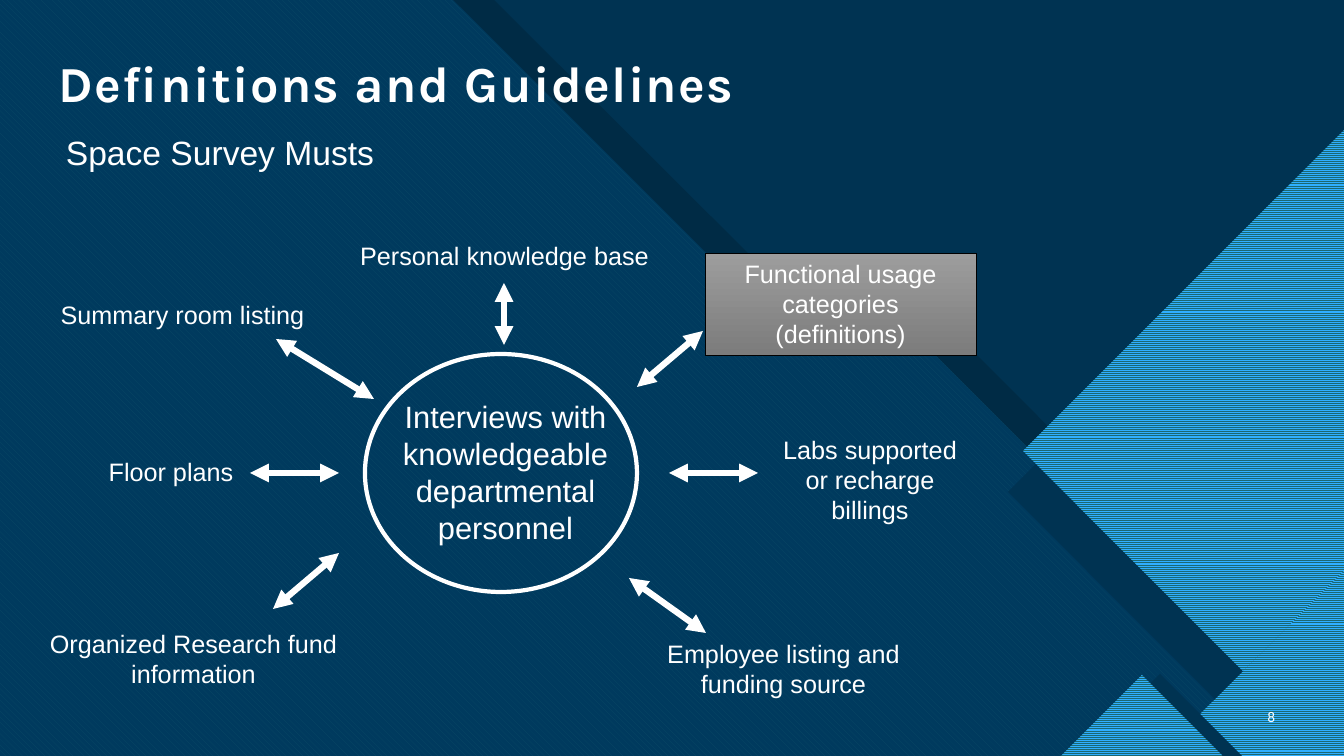
from lxml import etree
from pptx import Presentation
from pptx.dml.color import RGBColor
from pptx.enum.dml import MSO_PATTERN
from pptx.enum.shapes import MSO_CONNECTOR, MSO_SHAPE
from pptx.enum.text import MSO_ANCHOR, PP_ALIGN
from pptx.oxml.ns import qn
from pptx.util import Pt

PX = 12192000 / 1344  # EMU in one px
W, H = 1344, 756

WHITE = RGBColor(0xFF, 0xFF, 0xFF)
BLACK = RGBColor(0, 0, 0)
NAVY = RGBColor(0x00, 0x33, 0x52)
BLUE = RGBColor(0x00, 0x65, 0xA4)
CYAN = RGBColor(0x47, 0xC3, 0xD3)
SKY = RGBColor(0x2F, 0xAF, 0xFF)
TEAL = RGBColor(0x1B, 0x68, 0x72)
GRAY_TOP = RGBColor(0x9D, 0x9D, 0x9D)
GRAY_END = RGBColor(0x7C, 0x7C, 0x7C)

# Backdrop outlines, back to front: points, fill (one colour, or pattern with two), opacity %
HATCH = (MSO_PATTERN.WIDE_DOWNWARD_DIAGONAL, CYAN, BLUE)
STRIPES = (MSO_PATTERN.LIGHT_HORIZONTAL, SKY, TEAL)
BACKDROP = [
    ([(0, 0), (494, 0), (794, 299), (921, 299), (W, 723), (W, H), (0, H)], BLACK, 100),
    ([(0, 0), (453, 0), (752, 299), (879, 299), (1336, H), (0, H)], HATCH, 100),
    ([(0, 0), (701, 0), (1000, 299), (1127, 299), (W, 517), (W, H), (0, H)], NAVY, 85),
    ([(W, 156), (W, 714), (1230, 714), (1008, 492)], NAVY, 100),
    ([(W, 130), (W, 743), (1315, 743), (1023, 451)], STRIPES, 100),
    ([(W, 619), (W, H), (1207, H)], NAVY, 100),
    ([(W, 571), (W, H), (1158, H)], STRIPES, 100),
    ([(1242, H), (1160, 674), (1078, H)], NAVY, 100),
    ([(1061, H), (1142, 675), (1223, H)], STRIPES, 100),
]

# Text: wording, (left, top, width, height), size
TITLE = ("Definitions and Guidelines", (49, 59, 1236, 59), 36)
SUBTITLE = ("Space Survey Musts", (56, 132, 1184, 57), 24)
PAGE = ("8", (1241, 697, 44, 40), 10)
HUB = ("Interviews with knowledgeable departmental personnel", (390, 393, 231, 159), 22)
HUB_RING = (365, 354, 272, 238)
USAGE = ("Functional usage categories (definitions)", (705, 253, 271, 102), 18)
LABELS = [
    ("Summary room listing", (37, 294, 291, 40), 18),
    ("Floor plans", (45, 451, 252, 40), 18),
    ("Organized Research fund information", (12, 623, 363, 72), 18),
    ("Employee listing and funding source", (625, 633, 317, 72), 18),
    ("Labs supported or recharge billings", (764, 429, 212, 102), 18),
    ("Personal knowledge base", (331, 235, 347, 40), 18),
]
ARROWS = [  # x1, y1, x2, y2
    (276, 339, 374, 399),
    (250, 473, 339, 473),
    (273, 609, 339, 553),
    (629, 578, 706, 633),
    (669, 473, 758, 473),
    (637, 387, 703, 331),
    (504, 283, 504, 345),
]


def emu(values):
    return [round(v * PX) for v in values]


def write(sp, text, size, align=PP_ALIGN.CENTER, font="Arial", anchor=MSO_ANCHOR.TOP):
    tf = sp.text_frame
    tf.word_wrap = True
    tf.vertical_anchor = anchor
    p = tf.paragraphs[0]
    p.text = text
    p.alignment = align
    r = p.runs[0]
    r.font.size, r.font.name = Pt(size), font
    r.font.color.rgb = WHITE
    return p


def add_text(s, item, **style):
    text, box, size = item
    return write(s.shapes.add_textbox(*emu(box)), text, size, **style)


def add_outline(s, points, paint, opacity):
    fb = s.shapes.build_freeform(*points[0], scale=PX)
    fb.add_line_segments(points[1:], close=True)
    sp = fb.convert_to_shape()
    sp.shadow.inherit = False
    sp.line.fill.background()
    if isinstance(paint, RGBColor):
        sp.fill.solid()
        sp.fill.fore_color.rgb = paint
    else:
        sp.fill.patterned()
        sp.fill.pattern, sp.fill.fore_color.rgb, sp.fill.back_color.rgb = paint
    if opacity < 100:
        color = sp.fill._xPr.find(qn("a:solidFill"))[0]
        etree.SubElement(color, qn("a:alpha"), val=str(opacity * 1000))


def add_arrow(s, ends):
    cx = s.shapes.add_connector(MSO_CONNECTOR.STRAIGHT, *emu(ends))
    cx.line.color.rgb = WHITE
    cx.line.width = Pt(4.5)
    ln = cx.line._get_or_add_ln()
    for end in ("a:headEnd", "a:tailEnd"):
        etree.SubElement(ln, qn(end), type="triangle")
    etree.SubElement(cx._element.spPr, qn("a:effectLst"))


def main():
    prs = Presentation()
    prs.slide_width, prs.slide_height = emu((W, H))
    s = prs.slides.add_slide(prs.slide_layouts[6])

    # Backdrop
    s.background.fill.solid()
    s.background.fill.fore_color.rgb = NAVY
    for outline in BACKDROP:
        add_outline(s, *outline)

    # Headings and page number
    p = add_text(s, TITLE, align=PP_ALIGN.LEFT, font="Karla", anchor=MSO_ANCHOR.BOTTOM)
    p.line_spacing = 0.9
    p.runs[0].font.bold = True
    p.runs[0].font._element.set("spc", "100")
    add_text(s, SUBTITLE, align=PP_ALIGN.LEFT).line_spacing = 0.9
    add_text(s, PAGE, align=PP_ALIGN.RIGHT, font="Roboto", anchor=MSO_ANCHOR.MIDDLE)

    # Hub
    add_text(s, HUB)
    ring = s.shapes.add_shape(MSO_SHAPE.OVAL, *emu(HUB_RING))
    ring.shadow.inherit = False
    ring.fill.background()
    ring.line.color.rgb = WHITE
    ring.line.width = Pt(3)

    # Spokes and labels
    for ends in ARROWS:
        add_arrow(s, ends)
    for label in LABELS:
        add_text(s, label)

    # Highlighted label
    text, box, size = USAGE
    sp = s.shapes.add_shape(MSO_SHAPE.RECTANGLE, *emu(box))
    sp.shadow.inherit = False
    sp.fill.gradient()
    sp.fill.gradient_angle = 270
    for stop, color in zip(sp.fill.gradient_stops, (GRAY_TOP, GRAY_END)):
        stop.color.rgb = color
    sp.line.color.rgb = BLACK
    sp.line.width = Pt(0.5)
    write(sp, text, size)

    prs.save("out.pptx")


if __name__ == "__main__":
    main()
